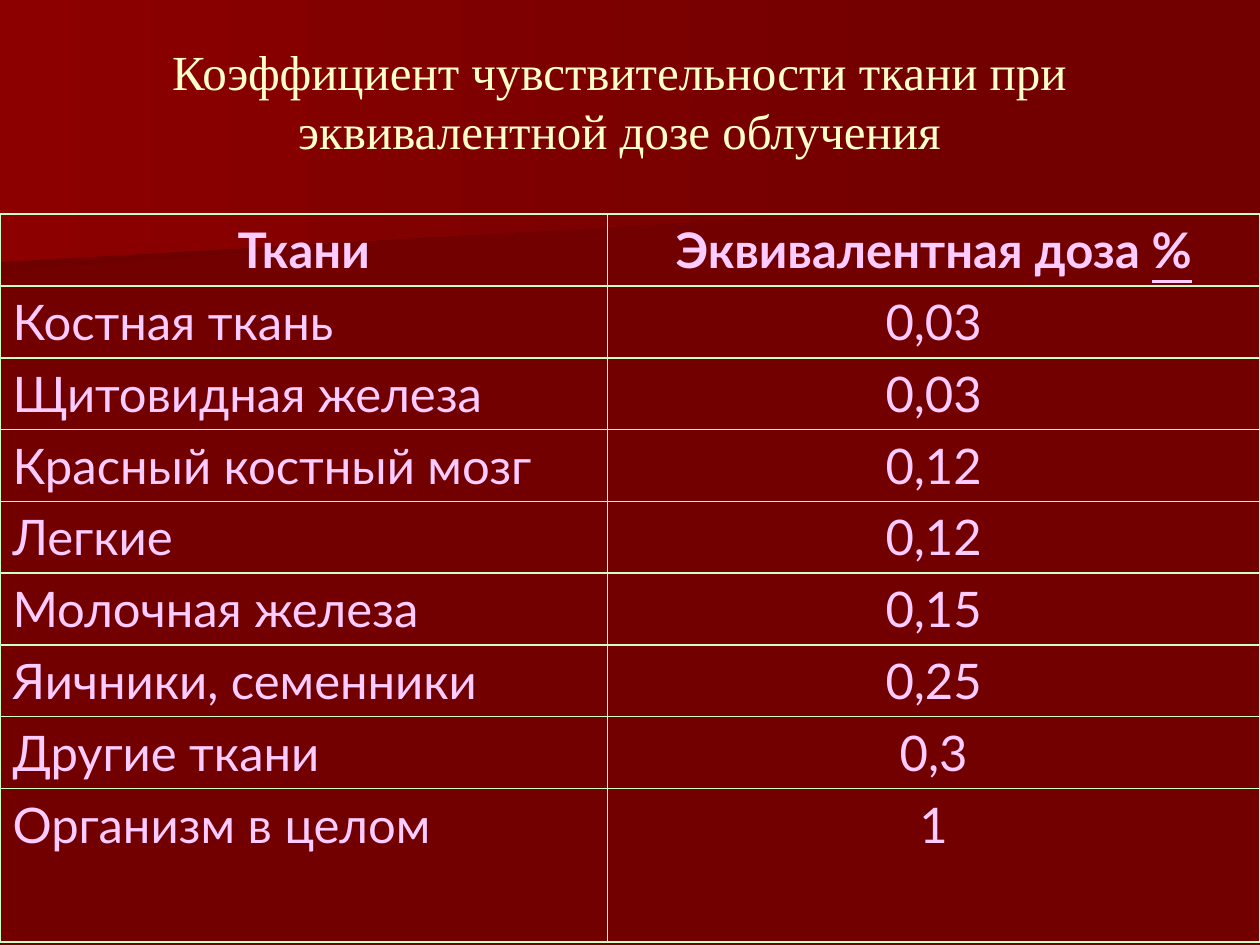
from lxml.etree import SubElement as Sub
from pptx import Presentation
from pptx.dml.color import RGBColor as RGB
from pptx.enum.text import PP_ALIGN as Align
from pptx.oxml.ns import qn
from pptx.util import Inches, Pt

TITLE = "Коэффициент чувствительности ткани при эквивалентной дозе облучения"
ROWS = [
    ("Ткани", "Эквивалентная доза %"),
    ("Костная ткань", "0,03"),
    ("Щитовидная железа", "0,03"),
    ("Красный костный мозг", "0,12"),
    ("Легкие", "0,12"),
    ("Молочная железа", "0,15"),
    ("Яичники, семенники", "0,25"),
    ("Другие ткани", "0,3"),
    ("Организм в целом", "1"),
]
WIDTHS = (4.82, 5.18)
ROW, LAST = 0.57, 1.22
DARK, PINK, CREAM, GREEN = "720000", "FFCCFF", "FFFFCC", "CCFFCC"
BANDS = [
    ("6F0000", [(7.78, 1.53), (0, 2.17), (0, 1.01), (7.79, 1.01), (7.78, 1.28)]),
    ("8C0000", [(7.92, 1.62), (0, 2.08), (0, 0), (7.92, 0)]),
]


def tint(code):
    return RGB.from_string(code)


def style(run, face, code, bold=False):
    font = run.font
    font.name, font.size, font.bold = face, Pt(28), bold
    font.color.rgb = tint(code)


def add_band(slide, code, points):
    start, *rest = [(Inches(x), Inches(y)) for x, y in points]
    pen = slide.shapes.build_freeform(*start)
    pen.add_line_segments(rest, close=True)
    band = pen.convert_to_shape()
    band.shadow.inherit = False
    band.line.fill.background()
    band.fill.gradient()
    band.fill.gradient_angle = 0
    for stop, shade in zip(band.fill.gradient_stops, (code, DARK)):
        stop.color.rgb = tint(shade)


def add_edges(cell):
    props = cell._tc.get_or_add_tcPr()
    for side in "LRTB":
        line = Sub(props, qn(f"a:ln{side}"), w=str(Pt(1)))
        fill = Sub(line, qn("a:solidFill"))
        Sub(fill, qn("a:srgbClr"), val=GREEN)


def add_grid(slide):
    high = ROW * (len(ROWS) - 1) + LAST
    frame = slide.shapes.add_table(
        len(ROWS), len(WIDTHS), 0, Inches(1.7), Inches(10), Inches(high))
    table = frame.table
    table.first_row = table.horz_banding = False
    for col, wide in zip(table.columns, WIDTHS):
        col.width = Inches(wide)
    for r, texts in enumerate(ROWS):
        table.rows[r].height = Inches(LAST if r == len(ROWS) - 1 else ROW)
        for c, text in enumerate(texts):
            cell = table.cell(r, c)
            add_edges(cell)
            cell.fill.background()
            para = cell.text_frame.paragraphs[0]
            para.text = text.removesuffix("%")
            if text.endswith("%"):
                sign = para.add_run()
                sign.text = "%"
                sign.font.underline = True
            para.alignment = Align.CENTER if r == 0 or c == 1 else Align.LEFT
            for run in para.runs:
                style(run, "Lato", PINK, r == 0)


def add_title(slide):
    box = slide.shapes.add_textbox(
        Inches(0.27), Inches(0.28), Inches(9.29), Inches(1.03))
    box.text_frame.word_wrap = True
    para = box.text_frame.paragraphs[0]
    para.text = TITLE
    para.alignment = Align.CENTER
    style(para.runs[0], "Times New Roman", CREAM)


def main():
    deck = Presentation()
    deck.slide_width, deck.slide_height = Inches(10), Inches(7.5)
    slide = deck.slides.add_slide(deck.slide_layouts[6])
    back = slide.background.fill
    back.solid()
    back.fore_color.rgb = tint(DARK)
    for code, points in BANDS:
        add_band(slide, code, points)
    add_grid(slide)
    add_title(slide)
    deck.save("out.pptx")


if __name__ == "__main__":
    main()
